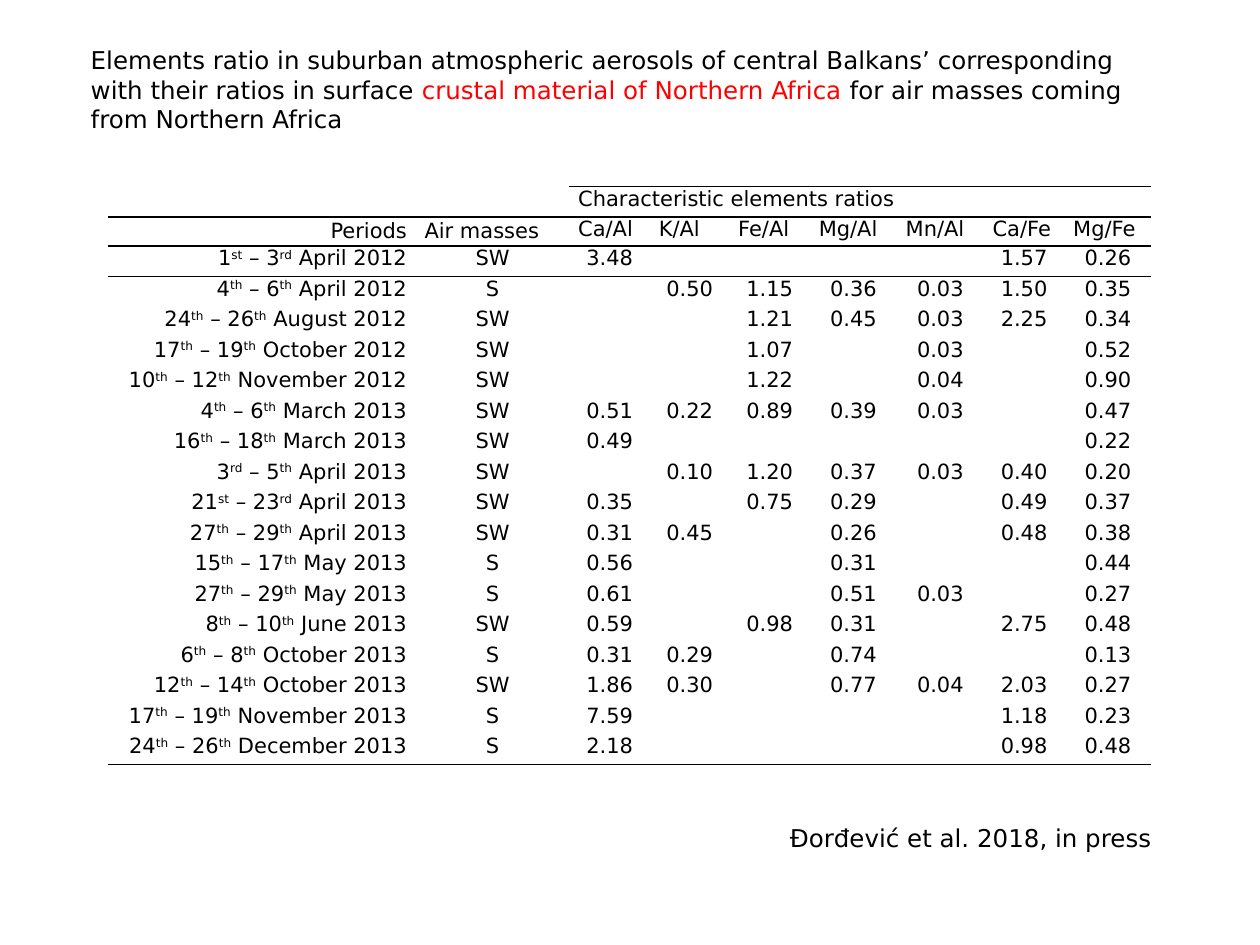
"""Build a slide tabulating element ratios in suburban aerosols of the central Balkans."""
from dataclasses import dataclass

from lxml import etree
from pptx import Presentation
from pptx.dml.color import RGBColor
from pptx.enum.text import MSO_ANCHOR, MSO_AUTO_SIZE, PP_ALIGN
from pptx.oxml.ns import qn
from pptx.util import Inches, Pt

LEFT, RIGHT = PP_ALIGN.LEFT, PP_ALIGN.RIGHT
CENTER, JUSTIFY = PP_ALIGN.CENTER, PP_ALIGN.JUSTIFY
TOP, MIDDLE = MSO_ANCHOR.TOP, MSO_ANCHOR.MIDDLE
FIXED_SIZE, FIT_SHAPE = MSO_AUTO_SIZE.NONE, MSO_AUTO_SIZE.SHAPE_TO_FIT_TEXT

BLACK = RGBColor(0x00, 0x00, 0x00)
RED = RGBColor(0xFF, 0x00, 0x00)
FONT_NAME = "DejaVu Sans"
TEXT_SIZE = Pt(14)
TABLE_SIZE = Pt(12)
NO_STYLE_NO_GRID = "{2D5ABB26-0587-4C30-8999-92F81FD0307C}"

TABLE_HEIGHT = 4.59
HEADING_HEIGHT = 0.23
COLUMN_WIDTHS = (2.44, 1.22, 0.64, 0.63, 0.64, 0.69, 0.69, 0.64, 0.69)
HEADINGS = ("Periods", "Air masses", "Ca/Al", "K/Al", "Fe/Al", "Mg/Al", "Mn/Al", "Ca/Fe", "Mg/Fe")
LABEL_COLUMNS = 2
HEADER_ROWS = 2
CELL_FORMAT = {
    "margin_left": Inches(0.07),
    "margin_right": Inches(0.07),
    "margin_top": 0,
    "margin_bottom": 0,
}


@dataclass(frozen=True)
class TextPart:
    text: str
    color: RGBColor = BLACK
    superscript: bool = False


@dataclass(frozen=True)
class Episode:
    first_day: str
    last_day: str
    month: str
    air_masses: str
    ratios: str

    def period_parts(self) -> list[TextPart]:
        return [
            TextPart(self.first_day[:-2]),
            TextPart(self.first_day[-2:], superscript=True),
            TextPart(f" – {self.last_day[:-2]}"),
            TextPart(self.last_day[-2:], superscript=True),
            TextPart(f" {self.month}"),
        ]


TITLE = [
    TextPart("Elements ratio in suburban atmospheric aerosols of central Balkans’ "
             "corresponding with their ratios in surface "),
    TextPart("crustal material of Northern Africa", RED),
    TextPart(" for air masses coming from Northern Africa"),
]

EPISODES = (
    Episode("1st", "3rd", "April 2012", "SW", "3.48 - - - - 1.57 0.26"),
    Episode("4th", "6th", "April 2012", "S", "- 0.50 1.15 0.36 0.03 1.50 0.35"),
    Episode("24th", "26th", "August 2012", "SW", "- - 1.21 0.45 0.03 2.25 0.34"),
    Episode("17th", "19th", "October 2012", "SW", "- - 1.07 - 0.03 - 0.52"),
    Episode("10th", "12th", "November 2012", "SW", "- - 1.22 - 0.04 - 0.90"),
    Episode("4th", "6th", "March 2013", "SW", "0.51 0.22 0.89 0.39 0.03 - 0.47"),
    Episode("16th", "18th", "March 2013", "SW", "0.49 - - - - - 0.22"),
    Episode("3rd", "5th", "April 2013", "SW", "- 0.10 1.20 0.37 0.03 0.40 0.20"),
    Episode("21st", "23rd", "April 2013", "SW", "0.35 - 0.75 0.29 - 0.49 0.37"),
    Episode("27th", "29th", "April 2013", "SW", "0.31 0.45 - 0.26 - 0.48 0.38"),
    Episode("15th", "17th", "May 2013", "S", "0.56 - - 0.31 - - 0.44"),
    Episode("27th", "29th", "May 2013", "S", "0.61 - - 0.51 0.03 - 0.27"),
    Episode("8th", "10th", "June 2013", "SW", "0.59 - 0.98 0.31 - 2.75 0.48"),
    Episode("6th", "8th", "October 2013", "S", "0.31 0.29 - 0.74 - - 0.13"),
    Episode("12th", "14th", "October 2013", "SW", "1.86 0.30 - 0.77 0.04 2.03 0.27"),
    Episode("17th", "19th", "November 2013", "S", "7.59 - - - - 1.18 0.23"),
    Episode("24th", "26th", "December 2013", "S", "2.18 - - - - 0.98 0.48"),
)


def apply_format(target, values: dict) -> None:
    for name, value in values.items():
        setattr(target, name, value)


def write_parts(paragraph, parts: list[TextPart], size: int, alignment) -> None:
    paragraph.alignment = alignment
    for part in parts:
        run = paragraph.add_run()
        run.text = part.text
        apply_format(run.font, {"name": FONT_NAME, "size": size})
        run.font.color.rgb = part.color
        if part.superscript:
            run._r.get_or_add_rPr().set("baseline", "30000")


def fill_cell(cell, parts: list[TextPart], alignment, anchor=TOP) -> None:
    apply_format(cell, CELL_FORMAT | {"vertical_anchor": anchor})
    paragraph = cell.text_frame.paragraphs[0]
    write_parts(paragraph, parts, TABLE_SIZE, alignment)
    if parts:
        paragraph.space_before = Pt(6)
    else:
        end_format = etree.SubElement(paragraph._p, qn("a:endParaRPr"))
        end_format.set("sz", str(int(TABLE_SIZE.pt * 100)))


def add_border(cell, side: str) -> None:
    line = etree.SubElement(cell._tc.get_or_add_tcPr(), qn(f"a:ln{side}"), w=str(Pt(1)))
    fill = etree.SubElement(line, qn("a:solidFill"))
    etree.SubElement(fill, qn("a:srgbClr"), val=str(BLACK))


def draw_rules(table) -> None:
    last_row = len(table.rows) - 1
    for row_index in range(len(table.rows)):
        for column_index in range(len(table.columns)):
            cell = table.cell(row_index, column_index)
            over_ratios = row_index == 0 and column_index >= LABEL_COLUMNS
            if over_ratios or row_index in (1, HEADER_ROWS):
                add_border(cell, "T")
            if row_index < HEADER_ROWS or row_index == last_row:
                add_border(cell, "B")
            cell.fill.background()


def add_ratio_table(slide) -> None:
    row_count = HEADER_ROWS + len(EPISODES)
    table = slide.shapes.add_table(
        row_count, len(HEADINGS), Inches(0.86), Inches(1.48),
        Inches(sum(COLUMN_WIDTHS)), Inches(TABLE_HEIGHT)).table
    apply_format(table, {"first_row": False, "horz_banding": False})
    table._tbl.tblPr.find(qn("a:tableStyleId")).text = NO_STYLE_NO_GRID
    for column, width in zip(table.columns, COLUMN_WIDTHS):
        column.width = Inches(width)
    for row in table.rows:
        row.height = Inches((TABLE_HEIGHT - HEADING_HEIGHT) / (row_count - 1))
    table.rows[1].height = Inches(HEADING_HEIGHT)

    for index, heading in enumerate(HEADINGS):
        group_heading = "Characteristic elements ratios" if index == LABEL_COLUMNS else ""
        fill_cell(table.cell(0, index), [TextPart(group_heading)] if group_heading else [], JUSTIFY)
        fill_cell(table.cell(1, index), [TextPart(heading)],
                  RIGHT if index == 0 else JUSTIFY,
                  MIDDLE if index < LABEL_COLUMNS else TOP)
    for row_index, episode in enumerate(EPISODES, HEADER_ROWS):
        fill_cell(table.cell(row_index, 0), episode.period_parts(), RIGHT)
        values = [episode.air_masses, *episode.ratios.split()]
        for column_index, value in enumerate(values, 1):
            parts = [] if value == "-" else [TextPart(value)]
            fill_cell(table.cell(row_index, column_index), parts, CENTER)

    draw_rules(table)
    table.cell(0, 0).merge(table.cell(0, LABEL_COLUMNS - 1))
    table.cell(0, LABEL_COLUMNS).merge(table.cell(0, len(HEADINGS) - 1))


def add_title(slide) -> None:
    title = slide.shapes.title
    apply_format(title, {"left": Inches(0.62), "top": Inches(0.31),
                         "width": Inches(8.52), "height": Inches(0.81)})
    apply_format(title.text_frame, {"word_wrap": True, "auto_size": FIXED_SIZE,
                                    "vertical_anchor": TOP})
    write_parts(title.text_frame.paragraphs[0], TITLE, TEXT_SIZE, LEFT)


def add_citation(slide) -> None:
    citation = slide.shapes.add_textbox(Inches(6.17), Inches(6.48), Inches(3.19), Inches(0.34))
    apply_format(citation.text_frame, {"word_wrap": False, "auto_size": FIT_SHAPE})
    write_parts(citation.text_frame.paragraphs[0],
                [TextPart("Đorđević et al. 2018, in press")], TEXT_SIZE, LEFT)


def main() -> None:
    presentation = Presentation()
    apply_format(presentation, {"slide_width": Inches(10), "slide_height": Inches(7.5)})
    slide = presentation.slides.add_slide(presentation.slide_layouts[5])
    add_citation(slide)
    add_title(slide)
    add_ratio_table(slide)
    presentation.save("out.pptx")


if __name__ == "__main__":
    main()
